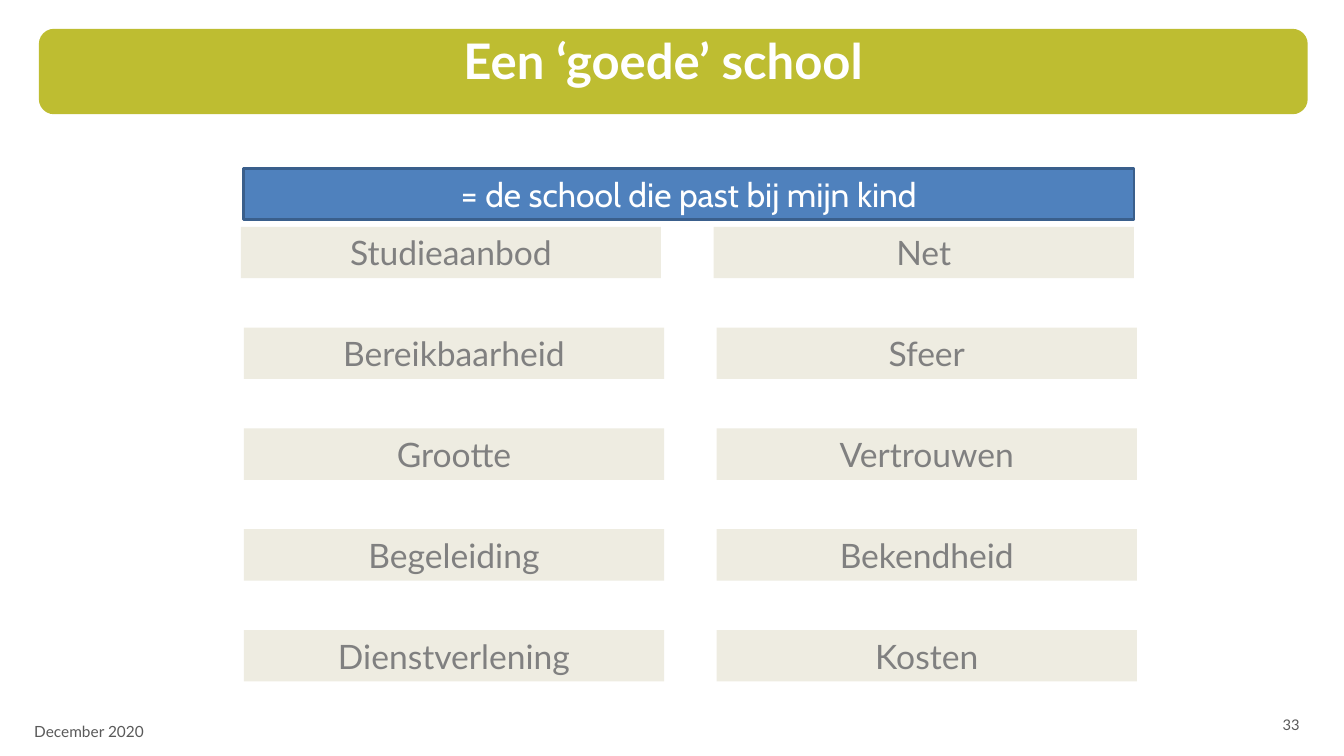
"""Build the slide on what makes a good school."""
from dataclasses import dataclass

from pptx import Presentation
from pptx.dml.color import RGBColor as Rgb
from pptx.enum.shapes import MSO_SHAPE as Kind
from pptx.enum.text import MSO_ANCHOR as Anchor, PP_ALIGN as Align
from pptx.util import Pt


@dataclass(frozen=True)
class Theme:
    """Colours, fonts and type sizes."""
    lime: str = "BEBD31"
    blue: str = "4F81BD"
    navy: str = "3A5F8C"
    sand: str = "EEECE1"
    white: str = "FFFFFF"
    grey: str = "808080"
    dark: str = "595959"
    sans: str = "Lato"
    round: str = "Cabin"
    title: float = 35
    body: float = 24
    date: float = 11
    page: float = 10.5


theme = Theme()


def add_box(kind, area, fill, line=None):
    box = slide.shapes.add_shape(kind, *map(Pt, area))
    box.shadow.inherit = False
    box.fill.solid()
    box.fill.fore_color.rgb = Rgb.from_string(fill)
    if line:
        box.line.color.rgb = Rgb.from_string(line)
        box.line.width = Pt(2)
    else:
        box.line.fill.background()
    return box


def set_text(box, text, size, color, face=theme.sans, align=Align.CENTER, anchor=Anchor.MIDDLE):
    frame = box.text_frame
    frame.text = text
    frame.word_wrap = True
    frame.vertical_anchor = anchor
    par = frame.paragraphs[0]
    par.alignment = align
    font = par.runs[0].font
    font.name = face
    font.size = Pt(size)
    font.color.rgb = Rgb.from_string(color)
    return font


deck = Presentation()
deck.slide_width, deck.slide_height = Pt(960), Pt(540)
slide = deck.slides.add_slide(deck.slide_layouts[6])

add_box(Kind.ROUNDED_RECTANGLE, (28.8, 21.6, 904.3, 59), theme.lime, theme.lime)

left, top, width, height = 174.2, 162, 300.2, 36.7
col_step, row_step, shift = 337.7, 72, 2.2

motto = add_box(Kind.RECTANGLE, (left, 120.2, 635.8, height), theme.blue, theme.navy)
set_text(motto, "= de school die past bij mijn kind", theme.body, theme.white, theme.round)

topics = [
    ["Studieaanbod", "Bereikbaarheid", "Grootte", "Begeleiding", "Dienstverlening"],
    ["Net", "Sfeer", "Vertrouwen", "Bekendheid", "Kosten"],
]
for col, names in enumerate(topics):
    for row, name in enumerate(names):
        x = left + col * col_step - (shift if row == 0 else 0)
        area = (x, top + row * row_step, width, height)
        topic = add_box(Kind.RECTANGLE, area, theme.sand)
        set_text(topic, name, theme.body, theme.grey)

title = slide.shapes.add_textbox(Pt(149.8), Pt(18), Pt(648), Pt(90))
font = set_text(title, "Een ‘goede’ school", theme.title, theme.white, anchor=Anchor.TOP)
font.bold = True

page = slide.shapes.add_textbox(Pt(713.5), Pt(503.3), Pt(221.8), Pt(28.8))
set_text(page, "33", theme.page, theme.dark, align=Align.RIGHT)

date = slide.shapes.add_textbox(Pt(17.3), Pt(508.3), Pt(245.5), Pt(28.8))
set_text(date, "December 2020", theme.date, theme.dark, align=Align.LEFT)

deck.save("out.pptx")
